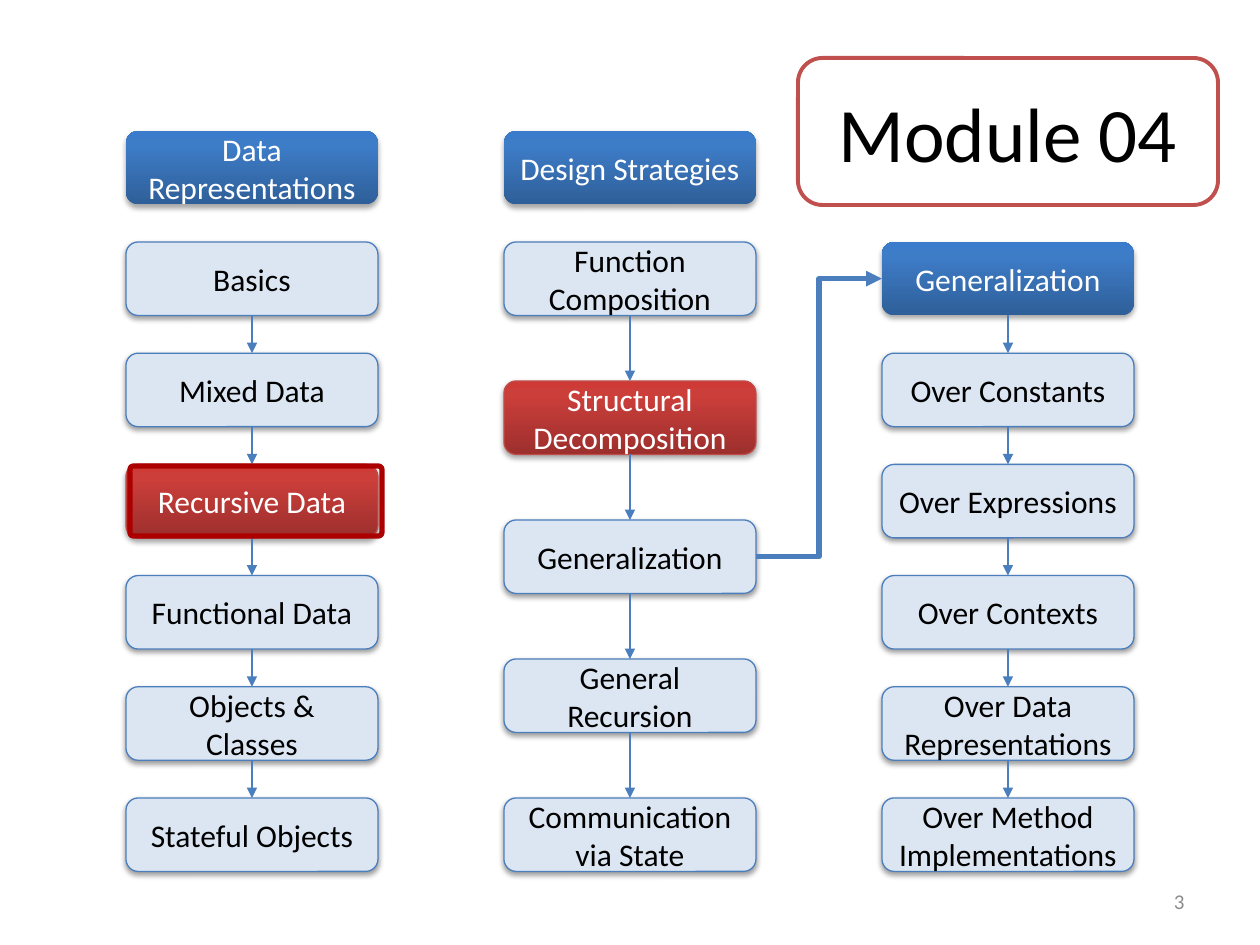
"""Build the course module map: three columns of linked topic boxes."""
from itertools import pairwise
from pptx import Presentation
from pptx.dml.color import RGBColor
from pptx.enum.shapes import MSO_CONNECTOR, MSO_SHAPE
from pptx.enum.text import MSO_ANCHOR, PP_ALIGN
from pptx.oxml import parse_xml
from pptx.oxml.ns import nsdecls, qn
from pptx.util import Emu, Pt

ROUND = MSO_SHAPE.ROUNDED_RECTANGLE
STRAIGHT, ELBOW = MSO_CONNECTOR.STRAIGHT, MSO_CONNECTOR.ELBOW
CENTER, RIGHT, MIDDLE = PP_ALIGN.CENTER, PP_ALIGN.RIGHT, MSO_ANCHOR.MIDDLE
TOP_SITE, LEFT_SITE, BOTTOM_SITE, RIGHT_SITE = range(4)

TITLE, PAGE = "Module 04", "3"
COLUMNS = [
    {"x": 126, "header": "Data Representations", "linked": False,
     "topics": ["Basics", "Mixed Data", "Recursive Data", "Functional Data",
                "Objects & Classes", "Stateful Objects"]},
    {"x": 504, "header": "Design Strategies", "linked": False,
     "topics": ["Function Composition", "Structural Decomposition",
                "Generalization", "General Recursion",
                "Communication via State"]},
    {"x": 882, "header": "Generalization", "linked": True,
     "topics": ["Over Constants", "Over Expressions", "Over Contexts",
                "Over Data Representations", "Over Method Implementations"]},
]
CURRENT = {"Recursive Data", "Structural Decomposition"}

PX = 914400 // 126
BOX_W, BOX_H = 252, 73.5
HEADER_Y, FIRST_Y, LAST_Y = 131, 242, 798
THEME = {
    "font": "Calibri", "body": 18, "title": 44, "page": 12,
    "black": "000000", "gray": "8C8C8C", "arrow": "4B7EBC",
    "title_line": "C0504D", "highlight": "AC0000",
    "header": {"fill": ["2F5F99", "3D7CC7", "3A7CCB"], "line": None,
               "color": "FFFFFF", "shadow": (35, 1.8)},
    "current": {"fill": ["9C2F2D", "CB3E3A", "CE3B37"], "line": "BF4C48",
                "color": "FFFFFF", "shadow": (35, 1.8)},
    "topic": {"fill": "DCE6F2", "line": "4B7EBC",
              "color": "000000", "shadow": (38, 1.6)},
}


def px(*values):
    return [Emu(round(v * PX)) for v in values]


def rgb(value):
    return RGBColor.from_string(value)


def write(shape, text, size=THEME["body"], color=THEME["black"], align=CENTER):
    tf = shape.text_frame
    tf.word_wrap = True
    tf.vertical_anchor = MIDDLE
    p = tf.paragraphs[0]
    p.alignment = align
    r = p.add_run()
    r.text = text
    r.font.name, r.font.size = THEME["font"], Pt(size)
    r.font.color.rgb = rgb(color)


def set_line(line, color, width):
    line.color.rgb = rgb(color)
    line.width = Pt(width)


def set_gradient(shape, colors):
    shape.fill.gradient()
    shape.fill.gradient_angle = 90
    stops = shape._element.spPr.find(qn("a:gradFill")).find(qn("a:gsLst"))
    for stop in list(stops):
        stops.remove(stop)
    for pos, color in zip((0, 80, 100), colors):
        stops.append(parse_xml(
            f'<a:gs {nsdecls("a")} pos="{pos * 1000}">'
            f'<a:srgbClr val="{color}"/></a:gs>'))


def set_shadow(shape, alpha, distance):
    shape._element.spPr.find(qn("a:effectLst")).append(parse_xml(
        f'<a:outerShdw {nsdecls("a")} blurRad="{Pt(3.1)}" dist="{Pt(distance)}"'
        f' dir="5400000" rotWithShape="0"><a:srgbClr val="000000">'
        f'<a:alpha val="{alpha * 1000}"/></a:srgbClr></a:outerShdw>'))


def add_round(s, x, y, w, h):
    sp = s.shapes.add_shape(ROUND, *px(x, y, w, h))
    sp.shadow.inherit = False
    return sp


def add_outline(s, x, y, w, h, color, width):
    sp = add_round(s, x, y, w, h)
    sp.fill.background()
    set_line(sp.line, color, width)
    return sp


def add_box(s, x, y, text, kind):
    style = THEME[kind]
    sp = add_round(s, x, y, BOX_W, BOX_H)
    if isinstance(style["fill"], list):
        set_gradient(sp, style["fill"])
    else:
        sp.fill.solid()
        sp.fill.fore_color.rgb = rgb(style["fill"])
    if style["line"]:
        set_line(sp.line, style["line"], 0.75)
    else:
        sp.line.fill.background()
    set_shadow(sp, *style["shadow"])
    write(sp, text, color=style["color"])
    return sp


def add_arrow(s, start, end, kind=STRAIGHT, sites=(BOTTOM_SITE, TOP_SITE), width=0.75):
    cxn = s.shapes.add_connector(kind, 0, 0, 0, 0)
    cxn.begin_connect(start, sites[0])
    cxn.end_connect(end, sites[1])
    set_line(cxn.line, THEME["arrow"], width)
    cxn.line._get_or_add_ln().append(
        parse_xml(f'<a:tailEnd {nsdecls("a")} type="triangle"/>'))
    cxn._element.spPr.append(parse_xml(f'<a:effectLst {nsdecls("a")}/>'))


def add_column(s, x, header, linked, topics):
    chain = [header, *topics] if linked else topics
    step = (LAST_Y - FIRST_Y) / (len(chain) - 1)
    if not linked:
        add_box(s, x, HEADER_Y, header, "header")
    boxes = []
    for i, text in enumerate(chain):
        kind = ("header" if linked and i == 0
                else "current" if text in CURRENT else "topic")
        boxes.append(add_box(s, x, FIRST_Y + i * step, text, kind))
    for start, end in pairwise(boxes):
        add_arrow(s, start, end)
    return dict(zip(chain, boxes))


def main():
    prs = Presentation()
    prs.slide_width, prs.slide_height = px(1260, 945)
    s = prs.slides.add_slide(prs.slide_layouts[6])
    _, strategies, generalization = [add_column(s, **c) for c in COLUMNS]
    add_arrow(s, strategies["Generalization"], generalization["Generalization"],
              kind=ELBOW, sites=(RIGHT_SITE, LEFT_SITE), width=3)
    title = add_outline(s, 798, 58, 420, 147, THEME["title_line"], 2.25)
    write(title, TITLE, size=THEME["title"])
    highlight = add_outline(s, 130, 466, 252, 70, THEME["highlight"], 3)
    highlight.adjustments[0] = 0.05
    page = s.shapes.add_textbox(*px(903, 876, 294, 50))
    write(page, PAGE, size=THEME["page"], color=THEME["gray"], align=RIGHT)
    prs.save("out.pptx")


if __name__ == "__main__":
    main()
